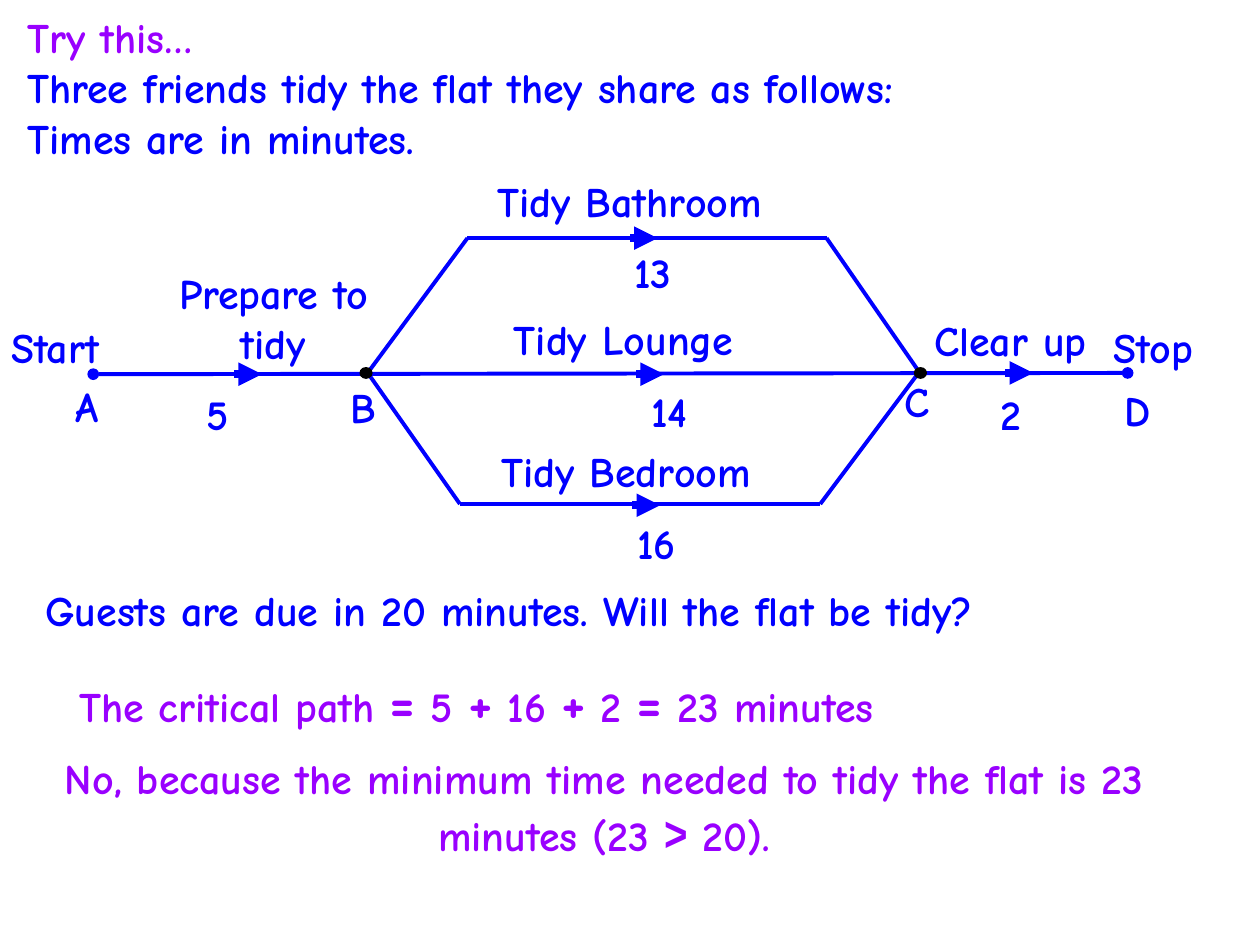
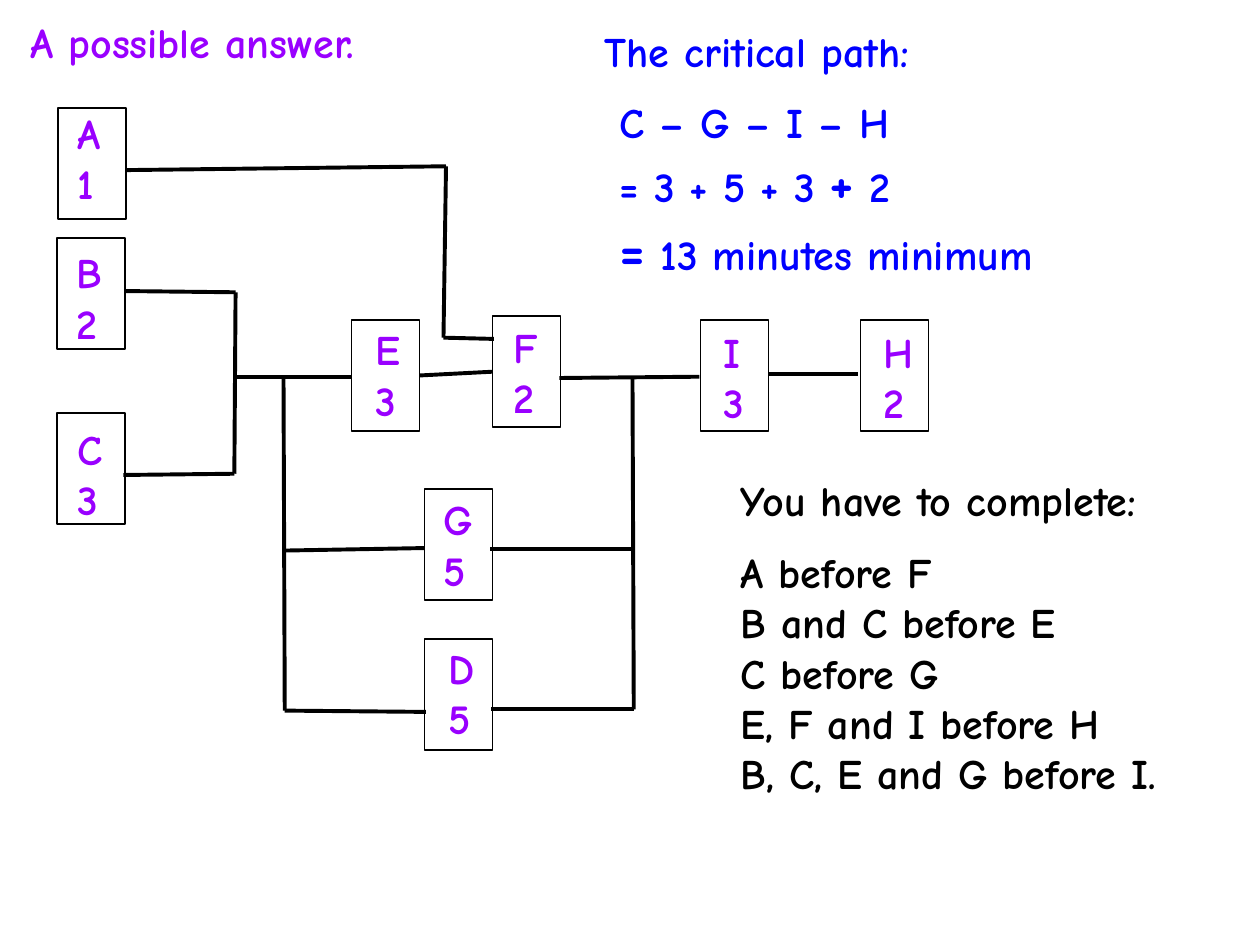
from collections import namedtuple
from dataclasses import dataclass

from lxml import etree
from pptx import Presentation
from pptx import util as u
from pptx.dml.color import RGBColor
from pptx.enum import shapes, text
from pptx.oxml.ns import qn


@dataclass
class Theme:
    blue: str = "0000FF"
    purple: str = "9900FF"
    black: str = "000000"
    white: str = "FFFFFF"
    font: str = "Comic Neue"
    sign: str = "Arial Narrow"
    size: int = 24
    mid: int = 28
    big: int = 32
    thin: float = 1
    line: float = 2.25
    thick: float = 4.5
    gap: int = 12


t = Theme()
Row = namedtuple("Row", "runs align gap dent", defaults=("left", 0, 0))
Run = namedtuple("Run", "word size font", defaults=(t.size, t.font))
sides = {"left": text.PP_ALIGN.LEFT, "mid": text.PP_ALIGN.CENTER}


def write(slide, at, rows, ink, title=False):
    at = [u.Inches(n) for n in at]
    if title:
        box = slide.shapes.title
        box.left, box.top, box.width, box.height = at
    else:
        box = slide.shapes.add_textbox(*at)
    frame = box.text_frame
    frame.word_wrap = True
    frame.auto_size = text.MSO_AUTO_SIZE.NONE
    frame.vertical_anchor = text.MSO_ANCHOR.TOP
    for i, row in enumerate(rows):
        row = Row([row]) if isinstance(row, str) else row
        para = frame.add_paragraph() if i else frame.paragraphs[0]
        para.alignment = sides[row.align]
        para.space_before = u.Pt(row.gap)
        if row.dent:
            para._p.get_or_add_pPr().set("marL", str(u.Inches(row.dent)))
        for part in row.runs:
            part = Run(part) if isinstance(part, str) else part
            run = para.add_run()
            run.text = part.word
            run.font.name = part.font
            run.font.size = u.Pt(part.size)
            run.font.bold = True
            run.font.color.rgb = RGBColor.from_string(ink)


def trace(slide, points, ink, width=t.line, head=None, tail=None):
    for start, end in zip(points, points[1:]):
        line = slide.shapes.add_connector(
            shapes.MSO_CONNECTOR.STRAIGHT, *[u.Inches(n) for n in start + end])
        line.line.color.rgb = RGBColor.from_string(ink)
        line.line.width = u.Pt(width)
        prop = line._element.spPr
        edge = prop.find(qn("a:ln"))
        for tag, kind in (("a:headEnd", head), ("a:tailEnd", tail)):
            if kind:
                etree.SubElement(edge, qn(tag)).set("type", kind)
        etree.SubElement(prop, qn("a:effectLst"))


deck = Presentation()
deck.slide_width, deck.slide_height = u.Inches(10), u.Inches(7.5)
lay = deck.slide_layouts[5]

flat = deck.slides.add_slide(lay)
write(flat, (0.12, 0.04, 8.49, 0.5), ["Try this…"], t.purple, title=True)
write(flat, (0.12, 0.44, 8.49, 0.91), [
    "Three friends tidy the flat they share as follows:",
    "Times are in minutes."], t.blue)

trace(flat, [(0.74, 2.97), (8.95, 2.96)], t.blue, head="oval", tail="oval")
trace(flat, [(2.94, 2.93), (3.71, 1.89), (6.56, 1.89), (7.28, 2.93)], t.blue)
trace(flat, [(2.94, 2.99), (3.65, 4), (6.51, 4), (7.29, 2.96)], t.blue)
for x, y in [(1.86, 2.97), (5, 1.89), (5.05, 2.97), (5.02, 4.01), (7.98, 2.96)]:
    trace(flat, [(x, y), (x + 0.22, y)], t.blue, t.thick, tail="triangle")

for x in (2.86, 7.26):
    dot = flat.shapes.add_shape(
        shapes.MSO_SHAPE.OVAL, *[u.Inches(n) for n in (x, 2.92, 0.09, 0.08)])
    dot.shadow.inherit = False
    dot.fill.solid()
    dot.fill.fore_color.rgb = RGBColor.from_string(t.black)
    dot.line.color.rgb = RGBColor.from_string(t.black)
    dot.line.width = u.Pt(t.thin)

for word, x, y, wide in [
        ("A", 0.5, 2.97, 0.3), ("B", 2.68, 2.98, 0.3),
        ("C", 7.08, 2.93, 0.3), ("D", 8.83, 3, 0.3),
        ("Start", -0.01, 2.5, 1.15), ("Stop", 8.74, 2.5, 0.97)]:
    write(flat, (x, y, wide, 0.5), [word], t.blue)

for job, time, x, y in [
        ("Tidy Bathroom", "13", 3.85, 1.34),
        ("Tidy Lounge", "14", 3.98, 2.44),
        ("Tidy Bedroom", "16", 3.88, 3.49)]:
    write(flat, (x, y, 2.66, 1.09), [job, Row([time], "mid", t.gap)], t.blue)
write(flat, (1.08, 2.07, 2.18, 1.51), [
    Row(["Prepare to tidy"], "mid"), Row(["5"], gap=t.gap, dent=0.46)], t.blue)
write(flat, (6.82, 2.45, 2.4, 1.09), [
    Row(["Clear up"], "mid"), Row(["2"], "mid", t.gap + 1)], t.blue)

write(flat, (0.26, 4.59, 8.87, 0.5), [
    "Guests are due in 20 minutes. Will the flat be tidy?"], t.blue)
plus, same = Run("+", t.big), Run("=", t.big)
write(flat, (0.53, 5.24, 9.21, 0.64), [
    Row(["The critical path ", same, " 5 ", plus, " 16 ", plus, " 2 ", same,
         " 23 minutes"])], t.purple)
write(flat, (0.26, 5.92, 9.07, 0.98), [
    Row(["No, because the minimum time needed to tidy the flat is 23 minutes (23 ",
         Run(">", t.mid, t.sign), " 20)."], "mid")], t.purple)

plan = deck.slides.add_slide(lay)
write(plan, (0.14, 0.08, 3.25, 0.5), ["A possible answer."], t.purple, title=True)
write(plan, (4.7, 0.15, 4.42, 2.15), [
    "The critical path:",
    Row(["C – G – I – H"], gap=t.gap, dent=0.12),
    Row(["= 3 + 5 + 3 ", plus, " 2"], dent=0.12),
    Row([same, " 13 minutes minimum"], dent=0.12)], t.blue)

for name, time, x, y, dx, dy in [
        ("A", "1", 0.46, 0.86, 0.06, -0.06),
        ("B", "2", 0.45, 1.89, 0.06, 0.02),
        ("C", "3", 0.45, 3.28, 0.07, 0.03),
        ("D", "5", 3.37, 5.07, 0.09, -0.02),
        ("E", "3", 2.79, 2.54, 0.09, -0.02),
        ("F", "2", 3.91, 2.51, 0.07, -0.01),
        ("G", "5", 3.37, 3.88, 0.05, -0.01),
        ("H", "2", 6.83, 2.54, 0.08, 0),
        ("I", "3", 5.56, 2.54, 0.08, 0)]:
    card = plan.shapes.add_shape(
        shapes.MSO_SHAPE.RECTANGLE, *[u.Inches(n) for n in (x, y, 0.54, 0.88)])
    card.shadow.inherit = False
    card.fill.solid()
    card.fill.fore_color.rgb = RGBColor.from_string(t.white)
    card.line.color.rgb = RGBColor.from_string(t.black)
    card.line.width = u.Pt(t.thin)
    write(plan, (x + dx, y + dy, 0.45, 0.91), [name, time], t.purple)

for points in [
        [(1, 1.35), (3.54, 1.32), (3.52, 2.68), (3.92, 2.69)],
        [(0.99, 2.31), (1.87, 2.32), (1.86, 3.76), (0.98, 3.77)],
        [(1.87, 2.99), (2.79, 2.99)],
        [(2.25, 2.99), (2.26, 5.64), (3.38, 5.65)],
        [(2.25, 4.37), (3.37, 4.35)],
        [(3.33, 2.98), (3.91, 2.95)],
        [(4.44, 3), (5.55, 2.99)],
        [(5.02, 2.99), (5.03, 5.63), (3.9, 5.63)],
        [(3.89, 4.36), (5.02, 4.36)],
        [(6.1, 2.97), (6.81, 2.97)]]:
    trace(plan, points, t.black)

write(plan, (5.78, 3.72, 4.2, 2.69), [
    "You have to complete:",
    Row(["A before F"], gap=t.gap),
    "B and C before E",
    "C before G",
    "E, F and I before H",
    "B, C, E and G before I."], t.black)

deck.save("out.pptx")
